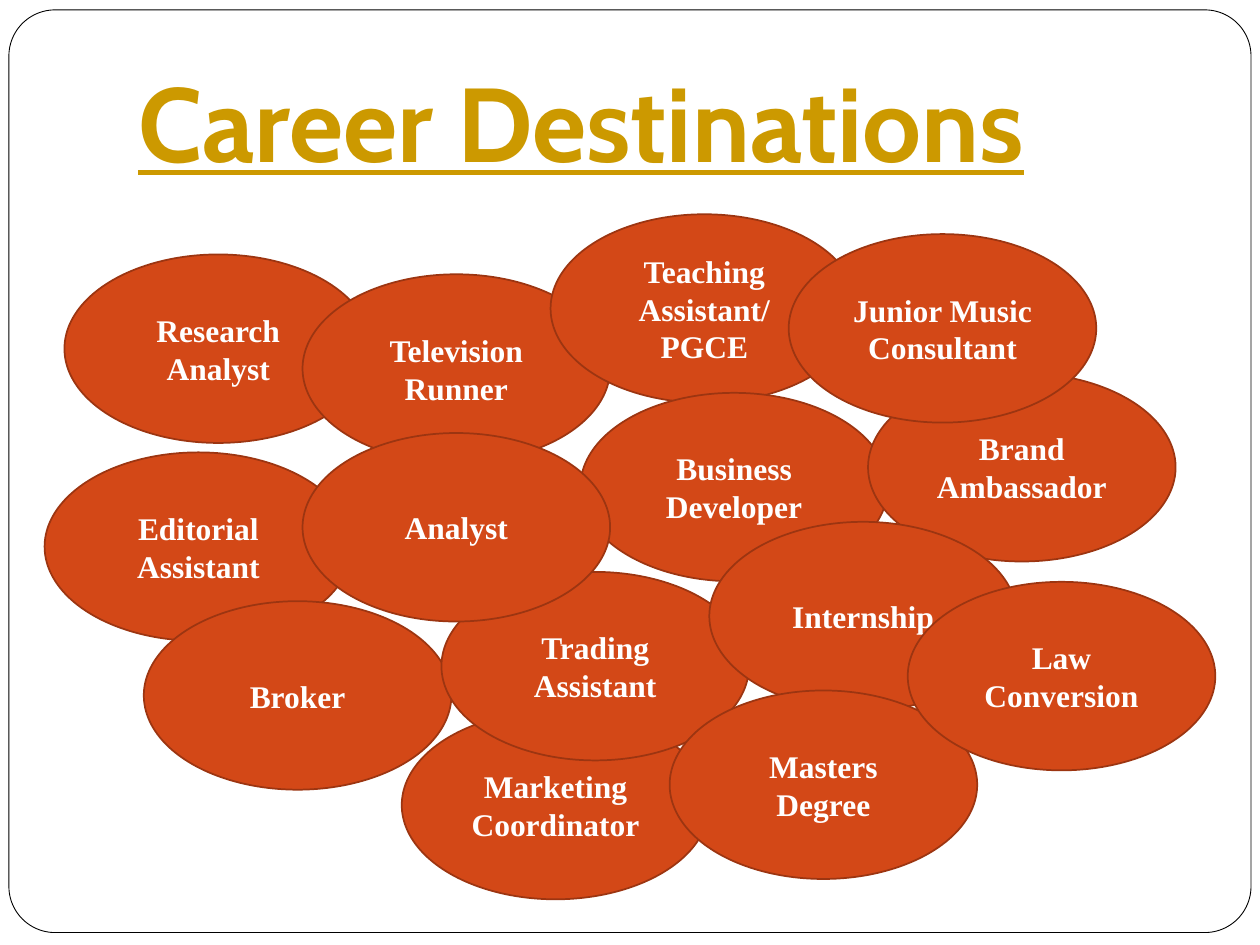
from typing import NamedTuple

from pptx import Presentation
from pptx import util as u
from pptx.dml.color import RGBColor
from pptx.enum import shapes, text

COLOURS = {
    "white": "FFFFFF",
    "frame": "000000",
    "title": "CC9900",
    "bubble": "D34817",
    "bubble_line": "9C3511",
}
BUBBLE_WIDTH, BUBBLE_HEIGHT = u.Cm(6.2), u.Cm(3.8)


class Career(NamedTuple):
    left: float
    top: float
    label: str


# Back to front, in centimetres; a line break starts a new paragraph.
CAREERS = [
    Career(1.3, 5.13, "Research Analyst"),
    Career(0.9, 9.12, "Editorial Assistant"),
    Career(2.9, 12.12, "Broker"),
    Career(8.1, 14.33, "Marketing Coordinator"),
    Career(6.1, 5.53, "Television Runner"),
    Career(11.1, 4.32, "Teaching Assistant/\nPGCE"),
    Career(11.7, 7.92, "Business Developer"),
    Career(8.9, 11.53, "Trading Assistant"),
    Career(17.5, 7.52, "Brand Ambassador"),
    Career(14.3, 10.52, "Internship"),
    Career(13.5, 13.92, "Masters Degree"),
    Career(18.3, 11.73, "Law Conversion"),
    Career(15.9, 4.72, "Junior Music Consultant"),
    Career(6.1, 8.73, "Analyst"),
]


def colour(name: str) -> RGBColor:
    return RGBColor.from_string(COLOURS[name])


def style_shape(shape, fill: str, line: str, width: float) -> None:
    shape.shadow.inherit = False
    shape.fill.solid()
    shape.fill.fore_color.rgb = colour(fill)
    shape.line.color.rgb = colour(line)
    shape.line.width = u.Pt(width)


def style_font(font, name: str, size: float, ink: str) -> None:
    font.name = name
    font.size = u.Pt(size)
    font.bold = True
    font.color.rgb = colour(ink)


def draw_frame(page) -> None:
    frame = page.shapes.add_shape(
        shapes.MSO_SHAPE.ROUNDED_RECTANGLE,
        u.Cm(0.18), u.Cm(0.2), u.Cm(25.04), u.Cm(18.6))
    frame.adjustments[0] = 0.05
    style_shape(frame, "white", "frame", 0.5)


def draw_title(page, wording: str) -> None:
    box = page.shapes.add_textbox(u.Cm(2.54), u.Cm(0.76), u.Cm(21.59), u.Cm(3.18))
    frame = box.text_frame
    frame.word_wrap = True
    frame.vertical_anchor = text.MSO_ANCHOR.BOTTOM
    frame.margin_bottom = u.Cm(0.25)
    para = frame.paragraphs[0]
    para.text = wording
    style_font(para.font, "Cabin", 60, "title")
    para.font.underline = True


def draw_career(page, career: Career) -> None:
    bubble = page.shapes.add_shape(
        shapes.MSO_SHAPE.OVAL, u.Cm(career.left), u.Cm(career.top),
        BUBBLE_WIDTH, BUBBLE_HEIGHT)
    style_shape(bubble, "bubble", "bubble_line", 1)
    frame = bubble.text_frame
    frame.word_wrap = True
    frame.vertical_anchor = text.MSO_ANCHOR.MIDDLE
    frame.text = career.label
    for para in frame.paragraphs:
        para.alignment = text.PP_ALIGN.CENTER
        style_font(para.font, "Times New Roman", 18, "white")


def main() -> None:
    deck = Presentation()
    deck.slide_width, deck.slide_height = u.Cm(25.4), u.Cm(19.05)
    page = deck.slides.add_slide(deck.slide_layouts[6])
    draw_frame(page)
    draw_title(page, "Career Destinations")
    for career in CAREERS:
        draw_career(page, career)
    deck.save("out.pptx")


if __name__ == "__main__":
    main()
